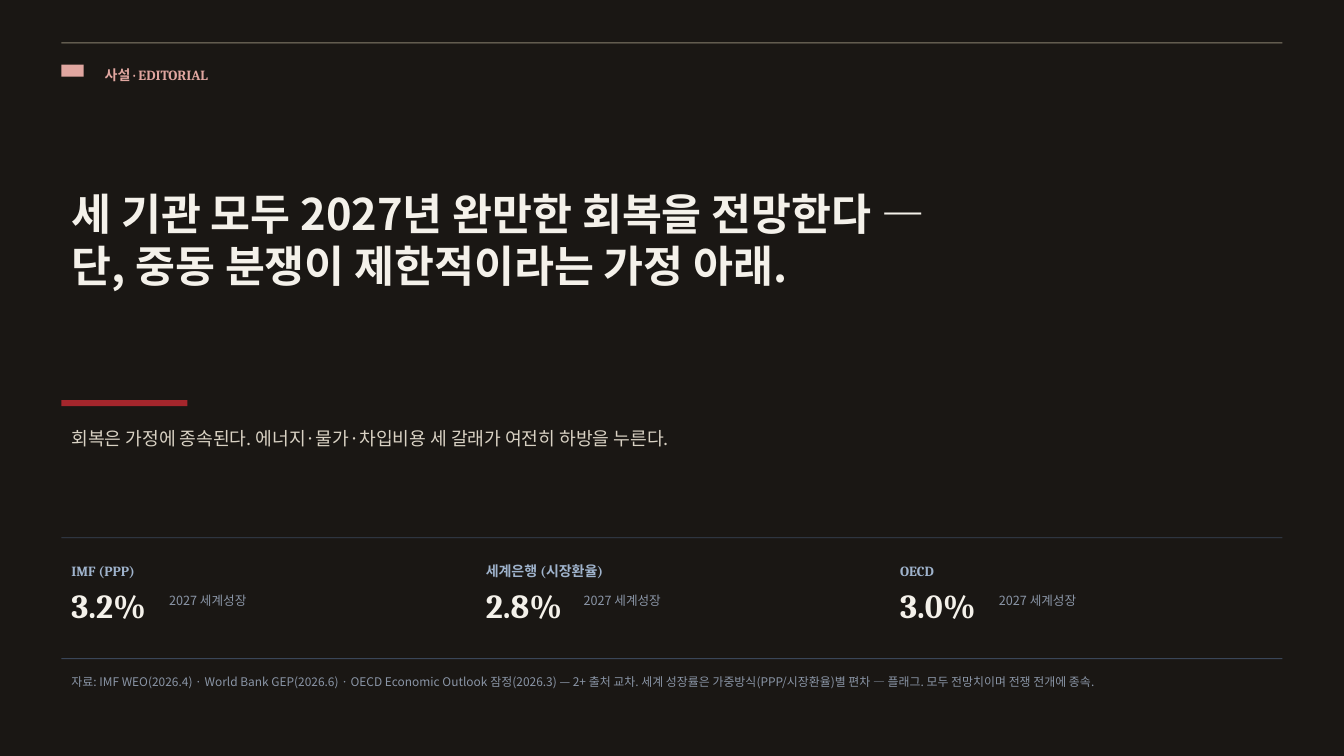
from pptx import Presentation
from pptx.dml.color import RGBColor
from pptx.enum.shapes import MSO_SHAPE
from pptx.enum.text import MSO_ANCHOR, MSO_AUTO_SIZE, PP_ALIGN
from pptx.util import Inches, Pt

SERIF, SANS = "Cambria", "Noto Sans CJK KR"
INK, IVORY, SAND = "1A1714", "F4F1EA", "D9D2C4"
ROSE, RED, TAUPE = "E0A6A0", "A4262C", "8A8270"
NAVY, SKY, SLATE = "3A4658", "9FB3CC", "8A95A6"

LEFT, WIDTH = 0.61, 12.11
COLUMN_STEP = 4.11

KICKER = "사설 · EDITORIAL"
HEADLINE = ["세 기관 모두 2027년 완만한 회복을 전망한다 —",
            "단, 중동 분쟁이 제한적이라는 가정 아래."]
SUBHEAD = "회복은 가정에 종속된다. 에너지·물가·차입비용 세 갈래가 여전히 하방을 누른다."
SOURCE = ("자료: IMF WEO(2026.4) · World Bank GEP(2026.6) · OECD Economic Outlook 잠정(2026.3) "
          "— 2+ 출처 교차. 세계 성장률은 가중방식(PPP/시장환율)별 편차 — 플래그. "
          "모두 전망치이며 전쟁 전개에 종속.")
CAPTION = "2027 세계성장"
# institution, label width, growth rate, rate width, caption offset
FORECASTS = [
    ("IMF (PPP)", 0.96, "3.2%", 1.03, 0.97),
    ("세계은행 (시장환율)", 1.49, "2.8%", 1.05, 0.97),
    ("OECD", 0.64, "3.0%", 1.06, 0.98),
]
# left, top, width, height, colour
BARS = [
    (LEFT, 0.42, WIDTH, 0.01, TAUPE),
    (LEFT, 0.64, 0.22, 0.12, ROSE),
    (LEFT, 3.97, 1.25, 0.06, RED),
    (LEFT, 5.33, WIDTH, 0.01, NAVY),
    (LEFT, 6.53, WIDTH, 0.01, NAVY),
]


def rgb(value):
    return RGBColor.from_string(value)


def add_bar(left, top, width, height, color):
    bar = s.shapes.add_shape(MSO_SHAPE.RECTANGLE, *map(Inches, (left, top, width, height)))
    bar.shadow.inherit = False
    bar.fill.solid()
    bar.fill.fore_color.rgb = rgb(color)
    bar.line.fill.background()


def fill_text(sp, lines, size, font, color, bold=False, wrap=True):
    tf = sp.text_frame
    tf.word_wrap = wrap
    tf.auto_size = MSO_AUTO_SIZE.SHAPE_TO_FIT_TEXT
    tf.vertical_anchor = MSO_ANCHOR.TOP
    for i, line in enumerate(lines):
        p = tf.add_paragraph() if i else tf.paragraphs[0]
        p.alignment = PP_ALIGN.LEFT
        r = p.add_run()
        r.text = line
        r.font.size = Pt(size)
        r.font.name = font
        r.font.bold = bold
        r.font.color.rgb = rgb(color)


def add_text(left, top, width, height, text, *style, **options):
    sp = s.shapes.add_textbox(*map(Inches, (left, top, width, height)))
    fill_text(sp, [text], *style, **options)


prs = Presentation()
prs.slide_width, prs.slide_height = Inches(13.33), Inches(7.5)
s = prs.slides.add_slide(prs.slide_layouts[5])
s.background.fill.solid()
s.background.fill.fore_color.rgb = rgb(INK)

title = s.shapes.title
title.left, title.top, title.width, title.height = map(Inches, (LEFT, 1.81, WIDTH, 1.14))
fill_text(title, HEADLINE, 31, SANS, IVORY, bold=True)

for bar in BARS:
    add_bar(*bar)

add_text(0.94, 0.61, 1.47, 0.27, KICKER, 10, SERIF, ROSE, bold=True, wrap=False)
add_text(LEFT, 4.19, WIDTH, 0.32, SUBHEAD, 13, SANS, SAND)

for i, (name, name_w, rate, rate_w, offset) in enumerate(FORECASTS):
    x = LEFT + i * COLUMN_STEP
    add_text(x, 5.53, name_w, 0.27, name, 10, SERIF, SKY, bold=True, wrap=False)
    add_text(x, 5.75, rate_w, 0.5, rate, 24, SERIF, IVORY, bold=True, wrap=False)
    add_text(x + offset, 5.83, 1.03, 0.25, CAPTION, 9, SANS, SLATE, wrap=False)

add_text(LEFT, 6.64, WIDTH, 0.24, SOURCE, 8.5, SANS, SLATE)

prs.save("out.pptx")
